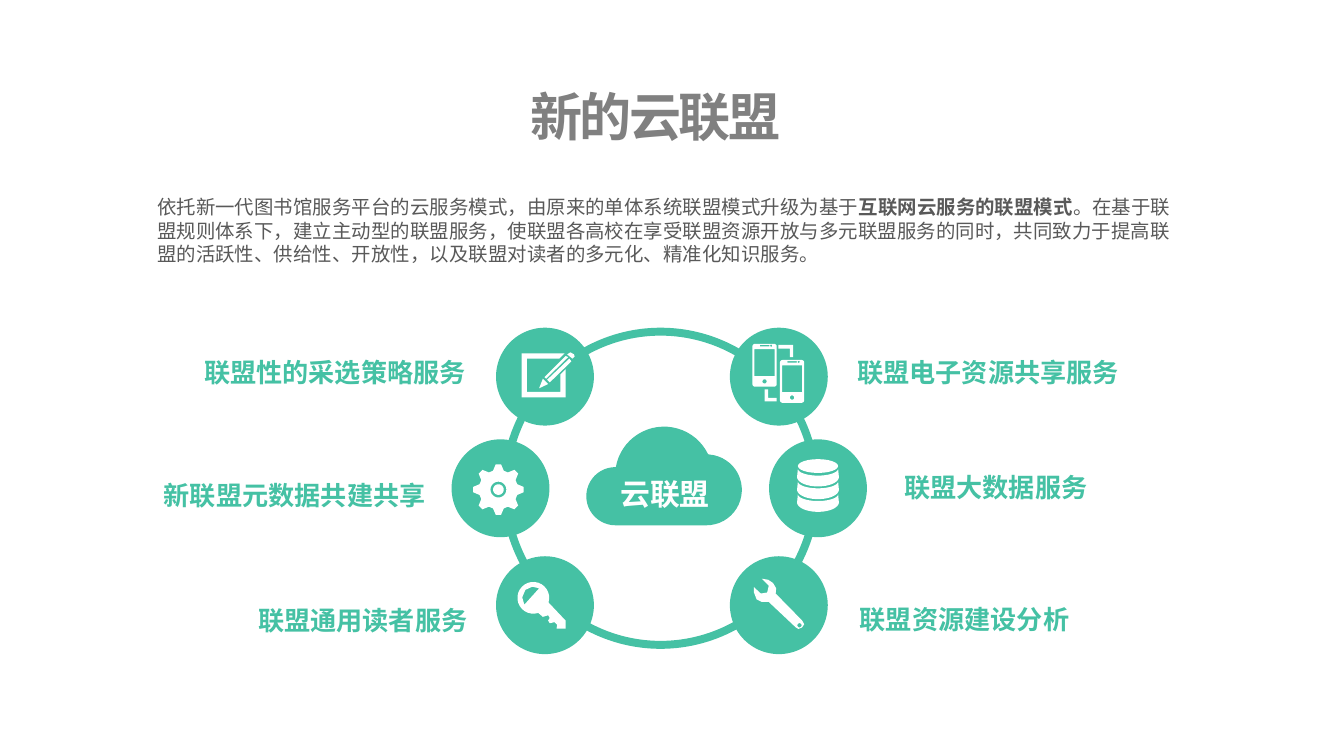
"""Build the slide on the new cloud alliance and its six services."""
from math import cos, radians, sin

from pptx import Presentation
from pptx.dml.color import RGBColor
from pptx.enum.shapes import MSO_SHAPE
from pptx.enum.text import MSO_ANCHOR, MSO_AUTO_SIZE, PP_ALIGN
from pptx.oxml.ns import qn
from pptx.util import Cm, Pt

LEFT, CENTER, RIGHT = PP_ALIGN.LEFT, PP_ALIGN.CENTER, PP_ALIGN.RIGHT
TOP, MIDDLE = MSO_ANCHOR.TOP, MSO_ANCHOR.MIDDLE
OVAL = MSO_SHAPE.OVAL
NO_AUTOSIZE = MSO_AUTO_SIZE.NONE
GREEN = RGBColor(0x45, 0xC1, 0xA4)
GRAY = RGBColor(0x80, 0x80, 0x80)
DARK = RGBColor(0x59, 0x59, 0x59)
WHITE = RGBColor(0xFF, 0xFF, 0xFF)
SANS, CJK = "Open Sans", "Noto Sans CJK SC"

TITLE = "新的云联盟"
HUB = "云联盟"
BODY = [
    ("依托新一代图书馆服务平台的云服务模式，由原来的单体系统联盟模式升级为基于", False),
    ("互联网云服务的联盟模式", True),
    ("。在基于联盟规则体系下，建立主动型的联盟服务，使联盟各高校在享受联盟资源开放与"
     "多元联盟服务的同时，共同致力于提高联盟的活跃性、供给性、开放性，以及联盟对读者的"
     "多元化、精准化知识服务。", False),
]
SERVICES = [
    ("联盟性的采选策略服务", "pencil", (10.3, 7.12), (3.68, 6.68), RIGHT),
    ("新联盟元数据共建共享", "gear", (9.46, 9.23), (2.92, 9.02), RIGHT),
    ("联盟通用读者服务", "key", (10.3, 11.44), (3.71, 11.38), RIGHT),
    ("联盟电子资源共享服务", "phones", (14.72, 7.12), (16.1, 6.68), LEFT),
    ("联盟大数据服务", "database", (15.46, 9.23), (16.99, 8.86), LEFT),
    ("联盟资源建设分析", "wrench", (14.72, 11.44), (16.15, 11.35), LEFT),
]
LABEL_SIZE = (5.23, 0.71)
DISC = 1.85
CLOUD_CENTER = (12.55, 8.99)


def arc(cx, cy, rx, ry=None, start=0, end=360, steps=24):
    """Return points along an elliptical arc, angles running clockwise."""
    angles = [radians(start + (end - start) * i / steps) for i in range(steps + 1)]
    return [(cx + rx * cos(a), cy + (ry or rx) * sin(a)) for a in angles]


def box(cx, cy, half_w, half_h, cut=0):
    """Return a rectangle whose corners are rounded by the radius cut."""
    corners = [(1, 1, 0), (-1, 1, 90), (-1, -1, 180), (1, -1, 270)]
    return [pt for sx, sy, a in corners
            for pt in arc(cx + sx * (half_w - cut), cy + sy * (half_h - cut),
                          cut, start=a, end=a + 90, steps=4)]


def gear(cx, cy, teeth=8):
    """Return the toothed rim, the hole and the hub of a gear."""
    profile = [(-16, 3.7), (-6, 4.8), (6, 4.8), (16, 3.7)]
    rim = [(cx + r * cos(radians(360 / teeth * i + a)), cy + r * sin(radians(360 / teeth * i + a)))
           for i in range(teeth) for a, r in profile]
    return [rim, arc(cx, cy, 1.5), arc(cx, cy, 1)]


def phone(cx, cy):
    """Return a phone body with screen, button, speaker and camera cut out."""
    return [box(cx, cy, 2.3, 4.05, 0.5), box(cx, cy - 0.5, 1.9, 2.55), arc(cx, cy + 3.05, 0.4),
            box(cx, cy - 3.7, 0.9, 0.13), arc(cx + 1.25, cy - 3.7, 0.2)]


def band(y):
    """Return one layer of the database drum."""
    return [arc(0, y, 3.8, 1.3, 180, 0) + arc(0, y + 1.55, 3.95, 1.8, 0, 180)]


ICONS = {
    "pencil": [
        [[(0.6, 1.4), (-0.4, 0.4), (-1.1, 2.2)]],
        [[(3.9, -3.9), (-0.1, 0.1), (0.2, 0.4), (4.4, -3.7)]],
        [[(0.4, 0.6), (0.9, 1.1), (5, -2.9), (4.6, -3.4)]],
        [[(4.2, -4.2), (4.8, -4.6), (5.5, -4.2), (5.6, -3.8), (5.2, -3.4)]],
        [[(2.9, 2.9), (-3.4, 2.9), (-3.4, -3.4), (2.7, -3.4), (3.7, -4.4), (-4.4, -4.4),
          (-4.4, 3.9), (3.9, 3.9), (3.9, -1.4), (2.9, -0.4)]],
    ],
    "gear": [gear(-0.4, 0.25)],
    "key": [[
        arc(-2.2, -1.4, 3, start=72, end=377)
        + [(3.9, 2.9), (3.9, 4.4), (2.2, 4.4), (2.3, 3.7), (1.8, 3.2), (0.9, 3.4),
           (0.6, 2.9), (0.9, 2.4), (0.6, 1.9), (-0.4, 2.2)],
        [(-3.9, -0.1), (-4.3, -1.5), (-3.7, -2.9), (-2.4, -3.5), (-1.1, -3.2)],
    ]],
    "phones": [
        phone(-2.7, -2.15),
        phone(2.5, 0.9),
        [[(2.1, -3.7), (2.7, -3.7), (2.7, -6), (-0.1, -6), (-0.1, -5.3), (2.1, -5.3)]],
        [[(-2, 2.4), (-2.7, 2.4), (-2.7, 4.7), (-0.4, 4.7), (-0.4, 4), (-2, 4)]],
    ],
    "database": [[arc(0, -4.2, 3.8, 1.3)]] + [band(-3.7 + 2.4 * i) for i in range(3)],
    "wrench": [[
        [(-0.6, -2.2), (-0.5, -3.2), (-1.1, -4.2), (-2, -4.8), (-3.2, -5), (-1.9, -3.7),
         (-2.2, -2.4), (-3.4, -2.2), (-4.7, -3.4), (-4.7, -2.4), (-4.2, -1.1), (-3.2, -0.6),
         (-1.9, -0.6), (3.2, 4.2), (3.7, 4.5), (4.4, 4.2), (4.8, 3.6), (4.4, 2.9)],
        arc(3.9, 3.8, 0.4),
    ]],
}
CLOUD = [arc(0, 0, 9.25, start=190, end=334) + arc(8, 2.7, 6.7, start=-85, end=90)
         + arc(-9.2, 3.9, 5.5, start=90, end=270)]


def paint(sp, fill=None, line=None, width=0):
    """Give a shape a flat fill and an optional outline."""
    sp.shadow.inherit = False
    if fill is None:
        sp.fill.background()
    else:
        sp.fill.solid()
        sp.fill.fore_color.rgb = fill
    if line is None:
        sp.line.fill.background()
    else:
        sp.line.color.rgb = line
        sp.line.width = Pt(width)


def add_outline(s, center, contours, color):
    """Draw contours given in millimetres around a centre given in cm."""
    points = [[(x * 100, y * 100) for x, y in contour] for contour in contours]
    builder = s.shapes.build_freeform(*points[0][0], scale=Cm(0.001))
    builder.add_line_segments(points[0][1:])
    for contour in points[1:]:
        builder.move_to(*contour[0])
        builder.add_line_segments(contour[1:])
    paint(builder.convert_to_shape(*map(Cm, center)), color)


def set_text(sp, runs, size, color, font=SANS, align=LEFT, anchor=TOP, spacing=None):
    """Fill a text shape with (text, bold) runs in one format."""
    tf = sp.text_frame
    tf.word_wrap, tf.auto_size, tf.vertical_anchor = True, NO_AUTOSIZE, anchor
    tf.margin_left = tf.margin_right = Cm(0.1)
    tf.margin_top = tf.margin_bottom = Cm(0.05)
    p = tf.paragraphs[0]
    p.alignment = align
    for text, bold in runs:
        r = p.add_run()
        r.text = text
        r.font.size, r.font.bold, r.font.name = Pt(size), bold, font
        r.font.color.rgb = color
        rPr = r.font._element
        rPr.makeelement(qn("a:ea"), {})
        ea = rPr.makeelement(qn("a:ea"), {"typeface": CJK})
        rPr.find(qn("a:latin")).addnext(ea)
        if spacing:
            rPr.set("spc", str(spacing))


def add_text(s, frame, runs, **fmt):
    """Add a text box at a frame given in cm."""
    set_text(s.shapes.add_textbox(*map(Cm, frame)), runs, **fmt)


def main():
    """Assemble and save the slide."""
    prs = Presentation()
    prs.slide_width, prs.slide_height = Cm(25.4), Cm(14.29)
    s = prs.slides.add_slide(prs.slide_layouts[5])
    title = s.shapes.title
    title.left, title.top, title.width, title.height = map(Cm, (1.3, 1.55, 22.17, 1.3))
    set_text(title, [(TITLE, True)], size=27.9, color=GRAY, align=CENTER, spacing=-130)
    ring = s.shapes.add_shape(OVAL, *map(Cm, (9.55, 6.27, 5.87, 5.92)))
    paint(ring, line=GREEN, width=4.25)
    for label, icon, (cx, cy), corner, align in SERVICES:
        disc = s.shapes.add_shape(OVAL, Cm(cx - DISC / 2), Cm(cy - DISC / 2), Cm(DISC), Cm(DISC))
        paint(disc, GREEN)
        for part in ICONS[icon]:
            add_outline(s, (cx, cy), part, WHITE)
        add_text(s, corner + LABEL_SIZE, [(label, True)], size=14, color=GREEN, align=align)
    add_text(s, (2.87, 3.63, 19.46, 1.45), BODY, size=10.4, color=DARK, font=CJK, anchor=MIDDLE)
    add_outline(s, CLOUD_CENTER, CLOUD, GREEN)
    add_text(s, (11.15, 8.94, 2.84, 0.79), [(HUB, True)], size=16, color=WHITE, font=CJK,
             align=CENTER)
    prs.save("out.pptx")


if __name__ == "__main__":
    main()
